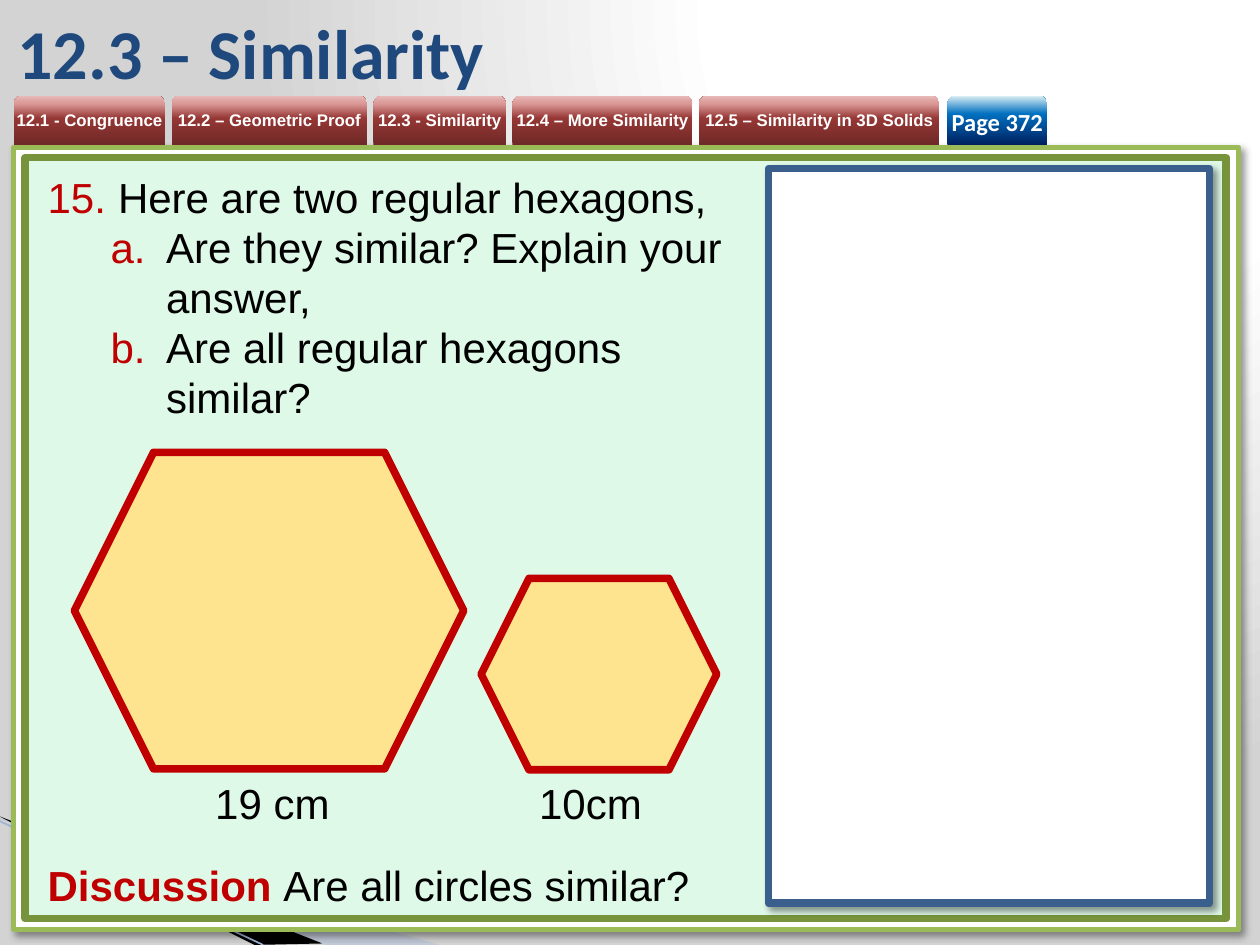
"""Build the 12.3 Similarity exercise slide with its section tabs and hexagons."""
from dataclasses import dataclass

from lxml import etree
from pptx import Presentation
from pptx.dml.color import RGBColor
from pptx.enum.shapes import MSO_CONNECTOR, MSO_SHAPE
from pptx.enum.text import MSO_ANCHOR, PP_ALIGN
from pptx.oxml import parse_xml
from pptx.oxml.ns import qn
from pptx.util import Cm, Pt

RECT, TAB, HEXAGON = MSO_SHAPE.RECTANGLE, MSO_SHAPE.ROUND_2_SAME_RECTANGLE, MSO_SHAPE.HEXAGON
STRAIGHT = MSO_CONNECTOR.STRAIGHT
LEFT, CENTER, MIDDLE = PP_ALIGN.LEFT, PP_ALIGN.CENTER, MSO_ANCHOR.MIDDLE
NS = 'xmlns:a="http://schemas.openxmlformats.org/drawingml/2006/main"'


@dataclass(frozen=True)
class Theme:
    white: str = "FFFFFF"
    black: str = "000000"
    navy: str = "1F497D"
    red: str = "C00000"
    mint: str = "DFF9E8"
    lime: str = "9BBB59"
    olive: str = "77933C"
    steel: str = "3A5F8C"
    honey: str = "FFE48F"
    ribbon: str = "A7B9DB"
    ribbon_edge: str = "9EB3D6"
    backdrop: tuple = ((0, "FFFFFF"), (40, "FFFFFF"), (100, "D3D3D3"))
    section: tuple = ((0, "6F2927"), (54, "953735"), (83, "D99694"), (100, "E6B9B8"))
    page: tuple = ((0, "002060"), (63, "0070C0"), (100, "DBEEF4"))
    title_size: float = 40
    body_size: float = 24
    page_size: float = 14
    section_size: float = 9.6
    body_font: str = "Arial"
    title_font: str = "Calibri"


theme = Theme()


def write(paragraph, text, size=theme.body_size, font=theme.body_font, color=theme.black,
          bold=False, align=LEFT, spacing=None, before=None):
    paragraph.alignment = align
    if spacing:
        paragraph.line_spacing = Pt(spacing)
    if before:
        paragraph.space_before = Pt(before)
    run = paragraph.add_run()
    run.text = text
    run.font.size, run.font.name, run.font.bold = Pt(size), font, bold
    run.font.color.rgb = RGBColor.from_string(color)


def blend(fill, element, stops, direction):
    fill.gradient()
    gradient = next(element.iter(qn("a:gradFill")))
    colors = "".join(f'<a:gs pos="{pos * 1000}"><a:srgbClr val="{color}"/></a:gs>'
                     for pos, color in stops)
    gradient.getparent().replace(gradient, parse_xml(
        f'<a:gradFill {NS} rotWithShape="1"><a:gsLst>{colors}</a:gsLst>{direction}</a:gradFill>'))


prs = Presentation()
prs.slide_width, prs.slide_height = Cm(25.4), Cm(19.05)
slide = prs.slides.add_slide(prs.slide_layouts[5])
shapes = slide.shapes
blend(slide.background.fill, slide.element, theme.backdrop,
      '<a:path path="circle"><a:fillToRect l="65000" t="0" r="0" b="98000"/></a:path>')

title = shapes.title
title.left, title.top, title.width, title.height = Cm(0.1), Cm(0.13), Cm(21.01), Cm(1.8)
title.text_frame.vertical_anchor = MIDDLE
write(title.text_frame.paragraphs[0], "12.3 – Similarity", size=theme.title_size,
      font=theme.title_font, color=theme.navy, bold=True)

for color, opacity, corners in (
    (theme.ribbon, 40, ((-0.03, 16.51), (8.86, 19.05), (6.58, 19.05), (-0.03, 16.48))),
    (theme.black, 100, ((0, 16.46), (6.5, 19.02), (5.13, 19.05), (0.03, 16.48))),
):
    points = [(Cm(x), Cm(y)) for x, y in corners]
    outline = shapes.build_freeform(*points[0])
    outline.add_line_segments(points[1:], close=True)
    ribbon = outline.convert_to_shape()
    ribbon.shadow.inherit = False
    ribbon.fill.solid()
    ribbon.fill.fore_color.rgb = RGBColor.from_string(color)
    ribbon.line.fill.background()
    tint = next(ribbon._element.spPr.iter(qn("a:srgbClr")))
    etree.SubElement(tint, qn("a:alpha"), val=str(opacity * 1000))

ribbon_edge = shapes.add_connector(STRAIGHT, Cm(-0.03), Cm(16.54), Cm(5.31), Cm(19.05))
ribbon_edge.line.color.rgb = RGBColor.from_string(theme.ribbon_edge)
ribbon_edge.line.width = Pt(0.95)
etree.SubElement(ribbon_edge._element.spPr, qn("a:effectLst"))

for kind, place, fill, line, weight, raised in (
    (RECT, (0.28, 2.97, 24.69, 15.77), theme.white, theme.lime, 3, True),
    (RECT, (0.51, 3.18, 24.21, 15.34), theme.mint, theme.olive, 4.33, False),
    (RECT, (15.49, 3.4, 8.89, 14.81), theme.white, theme.steel, 4.33, True),
    (HEXAGON, (1.5, 9.12, 7.85, 6.38), theme.honey, theme.red, 4.33, False),
    (HEXAGON, (9.7, 11.66, 4.75, 3.86), theme.honey, theme.red, 4.33, False),
):
    figure = shapes.add_shape(kind, *map(Cm, place))
    figure.shadow.inherit = False
    figure.fill.solid()
    figure.fill.fore_color.rgb = RGBColor.from_string(fill)
    figure.line.color.rgb = RGBColor.from_string(line)
    figure.line.width = Pt(weight)
    if raised:
        figure._element.spPr.find(qn("a:effectLst")).append(parse_xml(
            f'<a:outerShdw {NS} blurRad="{Pt(4)}" dist="{Pt(3)}" dir="2700000" algn="tl" '
            f'rotWithShape="0"><a:srgbClr val="{theme.black}"><a:alpha val="40000"/>'
            '</a:srgbClr></a:outerShdw>'))

tabs = []
tab_left, tab_gap = 0.28, 0.13
section_style = dict(size=theme.section_size, spacing=10)
for name, width in (("12.1 - Congruence", 3.05), ("12.2 – Geometric Proof", 3.94),
                    ("12.3 - Similarity", 2.67), ("12.4 – More Similarity", 3.63),
                    ("12.5 – Similarity in 3D Solids", 4.85)):
    tabs.append((name, tab_left, width, theme.section, section_style))
    tab_left += width + tab_gap
tabs.append(("Page 372", 19.1, 2.01, theme.page,
             dict(size=theme.page_size, font=theme.title_font)))

for name, left, width, stops, style in tabs:
    tab = shapes.add_shape(TAB, Cm(left), Cm(1.93), Cm(width), Cm(0.99))
    tab.shadow.inherit = False
    blend(tab.fill, tab._element, stops, '<a:lin ang="16200000" scaled="0"/>')
    tab.line.fill.background()
    frame = tab.text_frame
    frame.margin_left = frame.margin_right = frame.margin_top = frame.margin_bottom = 0
    frame.vertical_anchor, frame.word_wrap = MIDDLE, False
    write(frame.paragraphs[0], name, color=theme.white, bold=True, align=CENTER, **style)

exercise = shapes.add_textbox(Cm(0.71), Cm(3.33), Cm(14.6), Cm(14.96)).text_frame
exercise.word_wrap = True
paragraph = exercise.paragraphs[0]
for text, level, margin, indent, numbering in (
    ("Here are two regular hexagons,", 0, 1.42, -1.42, dict(type="arabicPeriod", startAt="15")),
    ("Are they similar? Explain your answer,", 1, 2.39, -1.12, dict(type="alphaLcPeriod")),
    ("Are all regular hexagons similar?", 1, 2.39, -1.12, dict(type="alphaLcPeriod")),
):
    paragraph.level = level
    properties = paragraph._p.get_or_add_pPr()
    properties.set("marL", str(Cm(margin)))
    properties.set("indent", str(Cm(indent)))
    bullet_color = etree.SubElement(properties, qn("a:buClr"))
    etree.SubElement(bullet_color, qn("a:srgbClr"), val=theme.red)
    etree.SubElement(properties, qn("a:buAutoNum"), **numbering)
    write(paragraph, text, spacing=28.7)
    paragraph = exercise.add_paragraph()
write(paragraph, "Discussion ", color=theme.red, bold=True, spacing=28.7, before=250)
write(paragraph, "Are all circles similar?")

side_lengths = shapes.add_textbox(Cm(4.09), Cm(15.54), Cm(9.19), Cm(1.27)).text_frame
side_lengths.word_wrap = False
lengths = side_lengths.paragraphs[0]
stops = etree.SubElement(lengths._p.get_or_add_pPr(), qn("a:tabLst"))
etree.SubElement(stops, qn("a:tab"), pos=str(Cm(6.53)), algn="l")
write(lengths, "19 cm\t10cm")

prs.save("out.pptx")
